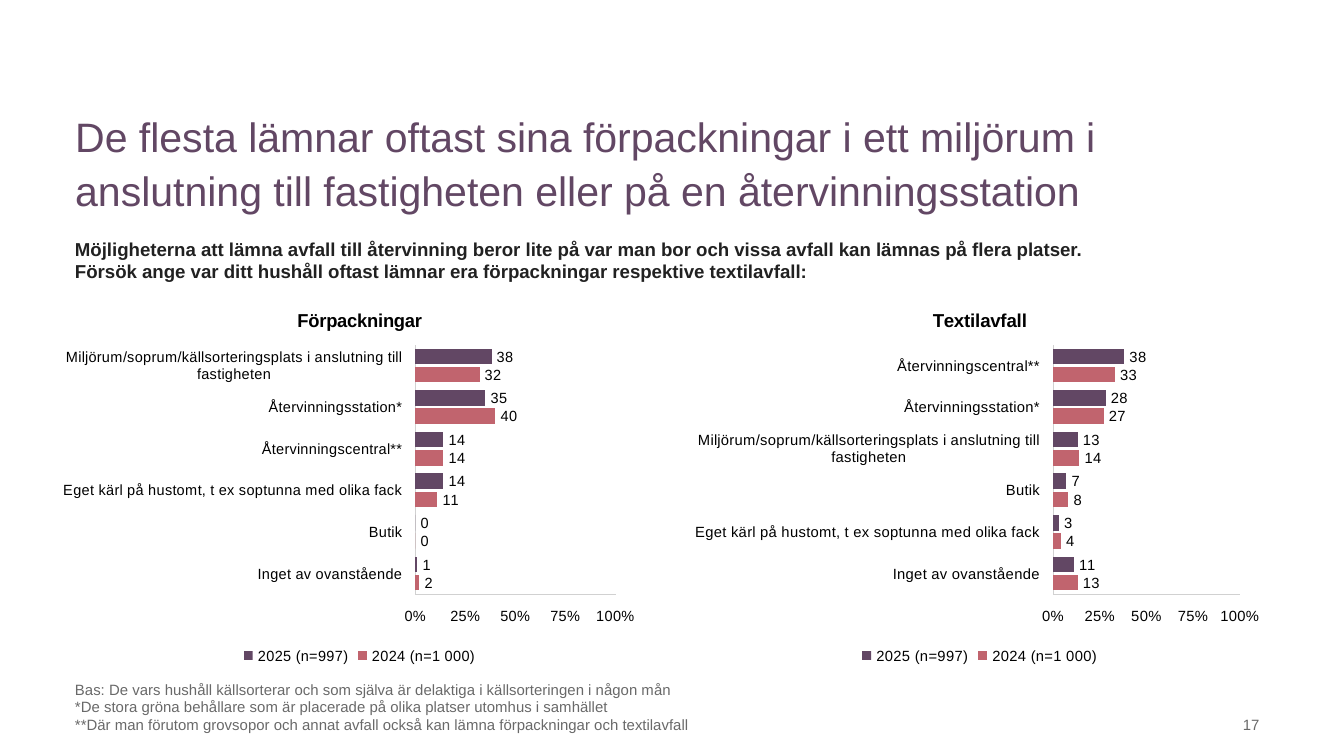
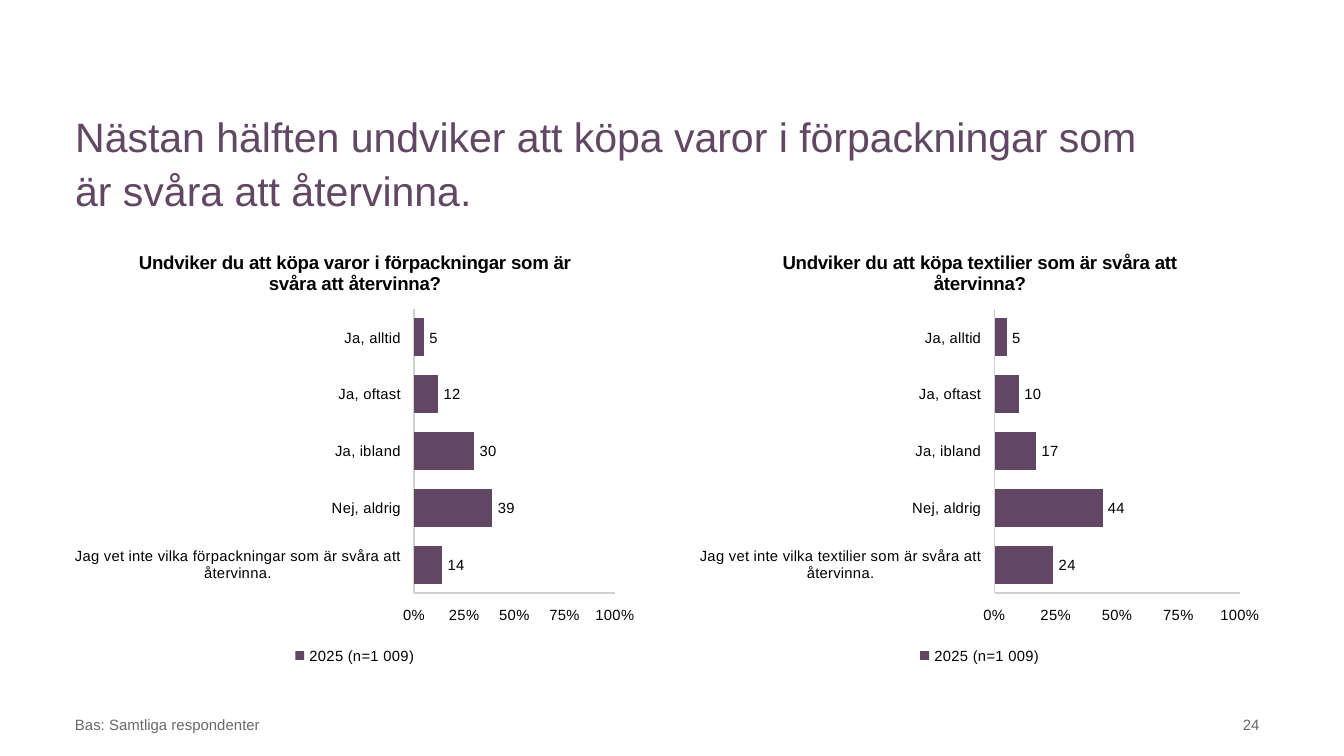
from pptx import Presentation, util as u
from pptx.chart.data import CategoryChartData
from pptx.dml.color import RGBColor
from pptx.enum import chart as ch, text

PLUM, ROSE, INK, GREY, RULE, BLACK = (
    "624764", "C1646E", "212121", "696969", "D1D1D1", "000000")
FACE = "Arial"
CELL = u.Inches(0.1)
LEFT, NOTE, WIDE = 4.6, 52.1, 90
LOW = 49.8

ROOM = "Miljörum/soprum/källsorteringsplats i anslutning till fastigheten"
BIN = "Eget kärl på hustomt, t ex soptunna med olika fack"
HUB, STOP = "Återvinningscentral**", "Återvinningsstation*"
SHOP, NONE = "Butik", "Inget av ovanstående"
HABIT = ["Nej, aldrig", "Ja, ibland", "Ja, oftast", "Ja, alltid"]


def tint(code):
    return RGBColor.from_string(code)


class Deck:
    def __init__(self):
        self.prs = Presentation()
        self.prs.slide_width = CELL * 100
        self.prs.slide_height = self.prs.slide_width * 9 // 16
        self.slide = None

    def cells(self, *sides):
        return [round(side * CELL) for side in sides]

    def font(self, font, size, color, bold=False):
        font.name, font.size, font.bold = FACE, u.Pt(size), bold
        font.color.rgb = tint(color)

    def fill(self, frame, lines, size, color, bold=False,
             align=text.PP_ALIGN.LEFT, anchor=text.MSO_ANCHOR.TOP):
        frame.word_wrap = True
        frame.auto_size = text.MSO_AUTO_SIZE.NONE
        frame.vertical_anchor = anchor
        for i, line in enumerate(lines):
            para = frame.add_paragraph() if i else frame.paragraphs[0]
            para.alignment = align
            run = para.add_run()
            run.text = line
            self.font(run.font, size, color, bold)

    def page(self, title, width):
        self.slide = self.prs.slides.add_slide(self.prs.slide_layouts[5])
        head = self.slide.shapes.title
        head.left, head.top, head.width, head.height = self.cells(
            LEFT, 7.4, width, 8.6)
        self.fill(head.text_frame, [title], 22, PLUM)
        para = head.text_frame.paragraphs[0]
        para.line_spacing, para.space_after = 1.1, u.Pt(5)

    def box(self, place, lines, size, color, **style):
        shape = self.slide.shapes.add_textbox(*self.cells(*place))
        self.fill(shape.text_frame, lines, size, color, **style)

    def foot(self, notes, number):
        base = text.MSO_ANCHOR.BOTTOM
        self.box((LEFT, NOTE, 78, 3), notes, 8, GREY, anchor=base)
        self.box((84, NOTE, 10.7, 3), [number], 8, GREY, anchor=base,
                 align=text.PP_ALIGN.RIGHT)

    def axis(self, axis):
        axis.has_major_gridlines = False
        axis.major_tick_mark = axis.minor_tick_mark = ch.XL_TICK_MARK.NONE
        axis.tick_label_position = ch.XL_TICK_LABEL_POSITION.LOW
        axis.format.line.color.rgb = tint(RULE)
        axis.format.line.width = u.Pt(0.75)
        self.font(axis.tick_labels.font, 7.9, BLACK)

    def bars(self, side, top, title, names, rows):
        data = CategoryChartData()
        data.categories = names
        for name, color, vals in rows:
            data.add_series(name, vals)
        place = self.cells(4.7 + 46.5 * side, top, 43.4, LOW - top)
        chart = self.slide.shapes.add_chart(
            ch.XL_CHART_TYPE.BAR_CLUSTERED, *place, data).chart
        self.font(chart.font, 10, INK)

        chart.has_title = True
        run = chart.chart_title.text_frame.paragraphs[0].add_run()
        run.text = title
        self.font(run.font, 10, BLACK, True)
        chart.chart_title.include_in_layout = False

        chart.has_legend = True
        chart.legend.position = ch.XL_LEGEND_POSITION.BOTTOM
        chart.legend.include_in_layout = False
        self.font(chart.legend.font, 7.9, BLACK)

        self.axis(chart.category_axis)
        scale = chart.value_axis
        self.axis(scale)
        scale.minimum_scale, scale.maximum_scale = 0, 100
        scale.major_unit = 25
        scale.tick_labels.number_format = "General\\%"
        scale.tick_labels.number_format_is_linked = False

        plot = chart.plots[0]
        plot.gap_width, plot.overlap = 50, -16
        plot.vary_by_categories = False
        for series, (name, color, vals) in zip(plot.series, rows):
            series.format.fill.solid()
            series.format.fill.fore_color.rgb = tint(color)
            series.invert_if_negative = False
            labels = series.data_labels
            labels.show_value = True
            labels.number_format = "0"
            labels.number_format_is_linked = False
            labels.position = ch.XL_LABEL_POSITION.OUTSIDE_END
            self.font(labels.font, 7.9, BLACK)


def waste(deck):
    deck.page("De flesta lämnar oftast sina förpackningar i ett miljörum i "
              "anslutning till fastigheten eller på en återvinningsstation",
              79.4)
    deck.foot([
        "Bas: De vars hushåll källsorterar och som själva är delaktiga i "
        "källsorteringen i någon mån",
        "*De stora gröna behållare som är placerade på olika platser utomhus "
        "i samhället",
        "**Där man förutom grovsopor och annat avfall också kan lämna "
        "förpackningar och textilavfall"], "17")
    charts = [
        ("Förpackningar", [NONE, SHOP, BIN, HUB, STOP, ROOM],
         [2, 0, 11, 14, 40, 32], [1, 0, 14, 14, 35, 38]),
        ("Textilavfall", [NONE, BIN, SHOP, ROOM, STOP, HUB],
         [13, 4, 8, 14, 27, 33], [11, 3, 7, 13, 28, 38])]
    for side, (title, names, old, new) in enumerate(charts):
        deck.bars(side, 21.6, title, names,
                  [("2024 (n=1 000)", ROSE, old), ("2025 (n=997)", PLUM, new)])
    deck.box((LEFT, 17.2, WIDE, 4.4), [
        "Möjligheterna att lämna avfall till återvinning beror lite på var "
        "man bor och vissa avfall kan lämnas på flera platser.",
        "Försök ange var ditt hushåll oftast lämnar era förpackningar "
        "respektive textilavfall:"], 10, INK, bold=True)


def avoid(deck):
    deck.page("Nästan hälften undviker att köpa varor i förpackningar som "
              "är svåra att återvinna.", 84.2)
    deck.foot(["Bas: Samtliga respondenter"], "24")
    charts = [
        ("varor i förpackningar", "förpackningar", [14, 39, 30, 12, 5]),
        ("textilier", "textilier", [24, 44, 17, 10, 5])]
    for side, (goods, kind, vals) in enumerate(charts):
        deck.bars(
            side, 17.2,
            f"Undviker du att köpa {goods} som är svåra att återvinna?",
            [f"Jag vet inte vilka {kind} som är svåra att återvinna."] + HABIT,
            [("2025 (n=1 009)", PLUM, vals)])


def main():
    deck = Deck()
    waste(deck)
    avoid(deck)
    deck.prs.save("out.pptx")


if __name__ == "__main__":
    main()
